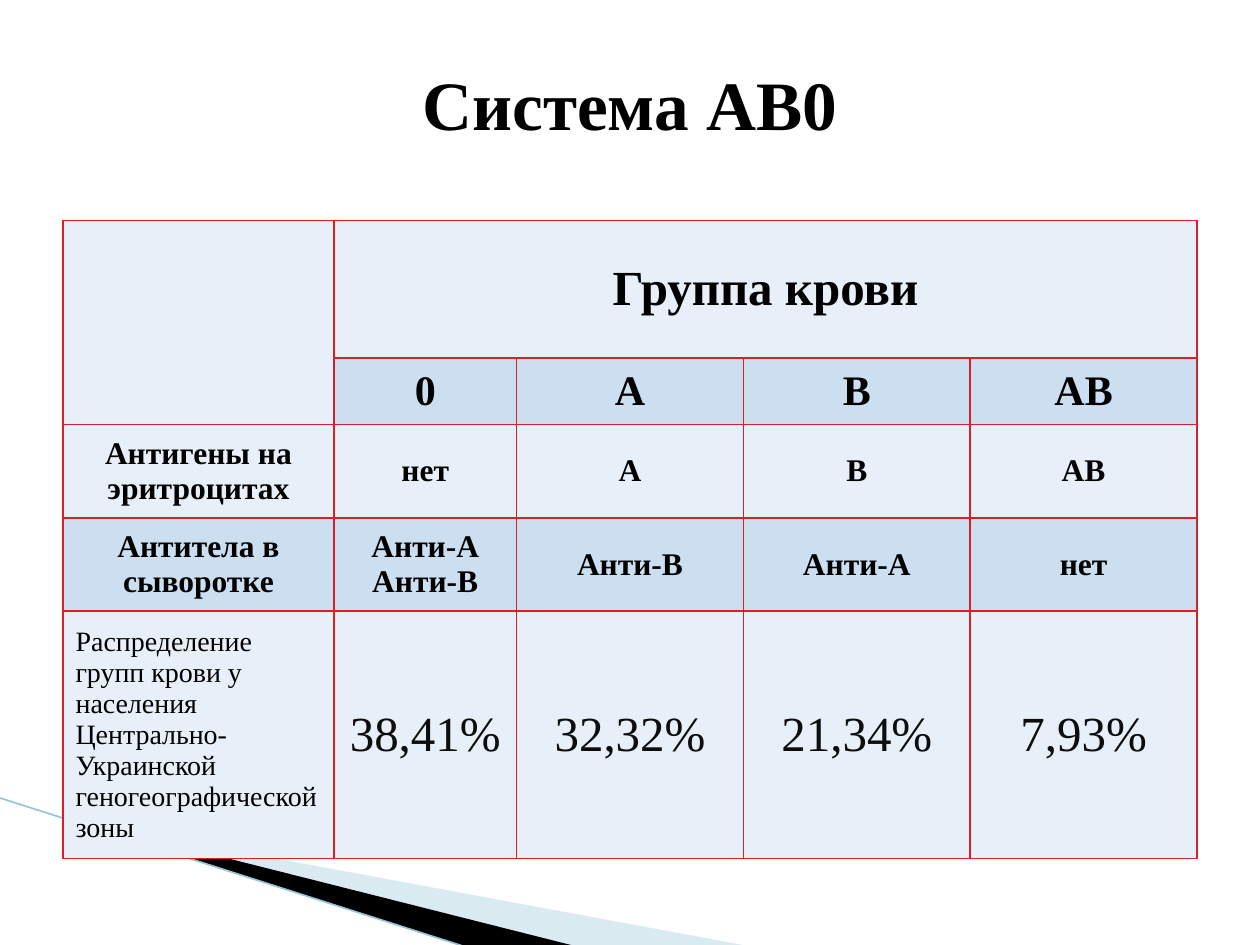
from dataclasses import dataclass

from lxml.etree import SubElement
from pptx import Presentation
from pptx.dml.color import RGBColor
from pptx.enum.shapes import MSO_CONNECTOR
from pptx.enum.text import MSO_ANCHOR, PP_ALIGN
from pptx.oxml.ns import qn
from pptx.util import Inches, Pt

HUES = {
    "text": "000000", "share": "0D0D0D", "pale": "E7F0F8", "deep": "CBDFF1",
    "edge": "DA1F28", "wing": "A0CBDC", "line": "97C5D8",
}
FONT = "Times New Roman"
COLS = (2.15, 1.45, 1.8, 1.8, 1.8)
ROWS = (1.09, 0.53, 0.74, 0.74, 1.78)


@dataclass(frozen=True)
class Style:
    size: float
    bold: bool = True
    hue: str = "text"
    align: PP_ALIGN = PP_ALIGN.CENTER


@dataclass(frozen=True)
class Band:
    fill: str
    words: tuple[str, ...]
    head: Style
    body: Style


@dataclass(frozen=True)
class Wedge:
    hue: str
    points: tuple[tuple[float, float], ...]
    alpha: int = 100


LABEL = Style(18)
GROUP = Style(24)
NOTE = Style(16, False, align=PP_ALIGN.LEFT)
SHARE = Style(28, False, "share")
BANDS = (
    Band("pale", ("", "Группа крови", "", "", ""), LABEL, Style(28)),
    Band("deep", ("", "0", "А", "В", "АВ"), GROUP, GROUP),
    Band("pale", ("Антигены на эритроцитах", "нет", "А", "В", "АВ"), LABEL, LABEL),
    Band("deep", ("Антитела в сыворотке", "Анти-А\nАнти-В", "Анти-В", "Анти-А", "нет"),
         LABEL, LABEL),
    Band("pale", ("Распределение групп крови у населения Центрально-Украинской "
                  "геногеографической зоны", "38,41%", "32,32%", "21,34%", "7,93%"),
         NOTE, SHARE),
)
WEDGES = (
    Wedge("wing", ((0.55, 6.51), (5.95, 7.51), (4.56, 7.51), (0.55, 6.5)), 40),
    Wedge("text", ((0.53, 6.49), (4.57, 7.51), (3.72, 7.52), (0.54, 6.5))),
)


def tint(name: str) -> RGBColor:
    return RGBColor.from_string(HUES[name])


def write(frame, text: str, style: Style) -> None:
    frame.text = text
    for para in frame.paragraphs:
        para.alignment = style.align
        font = para.font
        font.name, font.size, font.bold = FONT, Pt(style.size), style.bold
        font.color.rgb = tint(style.hue)


def draw_wedge(slide, wedge: Wedge) -> None:
    first, *rest = [(Inches(x), Inches(y)) for x, y in wedge.points]
    pen = slide.shapes.build_freeform(*first)
    pen.add_line_segments(rest)
    shape = pen.convert_to_shape()
    shape.shadow.inherit = False
    shape.fill.solid()
    shape.fill.fore_color.rgb = tint(wedge.hue)
    shape.line.fill.background()
    if wedge.alpha < 100:
        color = shape.fill._xPr.find(".//" + qn("a:srgbClr"))
        SubElement(color, qn("a:alpha"), val=str(wedge.alpha * 1000))


def draw_line(slide) -> None:
    line = slide.shapes.add_connector(
        MSO_CONNECTOR.STRAIGHT, Inches(-0.01), Inches(6.33), Inches(3.71), Inches(7.52))
    line.line.color.rgb = tint("line")
    line.line.width = Pt(0.95)
    SubElement(line._element.spPr, qn("a:effectLst"))


def draw_title(slide) -> None:
    box = slide.shapes.add_textbox(Inches(0.5), Inches(0.35), Inches(9), Inches(0.93))
    frame = box.text_frame
    frame.word_wrap = True
    frame.vertical_anchor = MSO_ANCHOR.MIDDLE
    write(frame, "Система АВ0", Style(39.6))


def paint(cell, hue: str) -> None:
    props = cell._tc.get_or_add_tcPr()
    for side in ("lnL", "lnR", "lnT", "lnB"):
        edge = SubElement(props, qn("a:" + side), w=str(Pt(1)))
        fill = SubElement(edge, qn("a:solidFill"))
        SubElement(fill, qn("a:srgbClr"), val=HUES["edge"])
    cell.fill.solid()
    cell.fill.fore_color.rgb = tint(hue)
    cell.vertical_anchor = MSO_ANCHOR.MIDDLE


def draw_table(slide) -> None:
    table = slide.shapes.add_table(
        len(ROWS), len(COLS), Inches(0.5), Inches(1.75),
        Inches(sum(COLS)), Inches(sum(ROWS))).table
    for col, width in zip(table.columns, COLS):
        col.width = Inches(width)
    for row, height in zip(table.rows, ROWS):
        row.height = Inches(height)
    for row, band in zip(table.rows, BANDS):
        for index, (cell, text) in enumerate(zip(row.cells, band.words)):
            paint(cell, band.fill)
            write(cell.text_frame, text, band.body if index else band.head)
    table.cell(0, 0).merge(table.cell(1, 0))
    table.cell(0, 1).merge(table.cell(0, 4))


def main() -> None:
    deck = Presentation()
    deck.slide_width, deck.slide_height = Inches(10), Inches(7.5)
    slide = deck.slides.add_slide(deck.slide_layouts[6])
    for wedge in WEDGES:
        draw_wedge(slide, wedge)
    draw_line(slide)
    draw_title(slide)
    draw_table(slide)
    deck.save("out.pptx")


if __name__ == "__main__":
    main()
